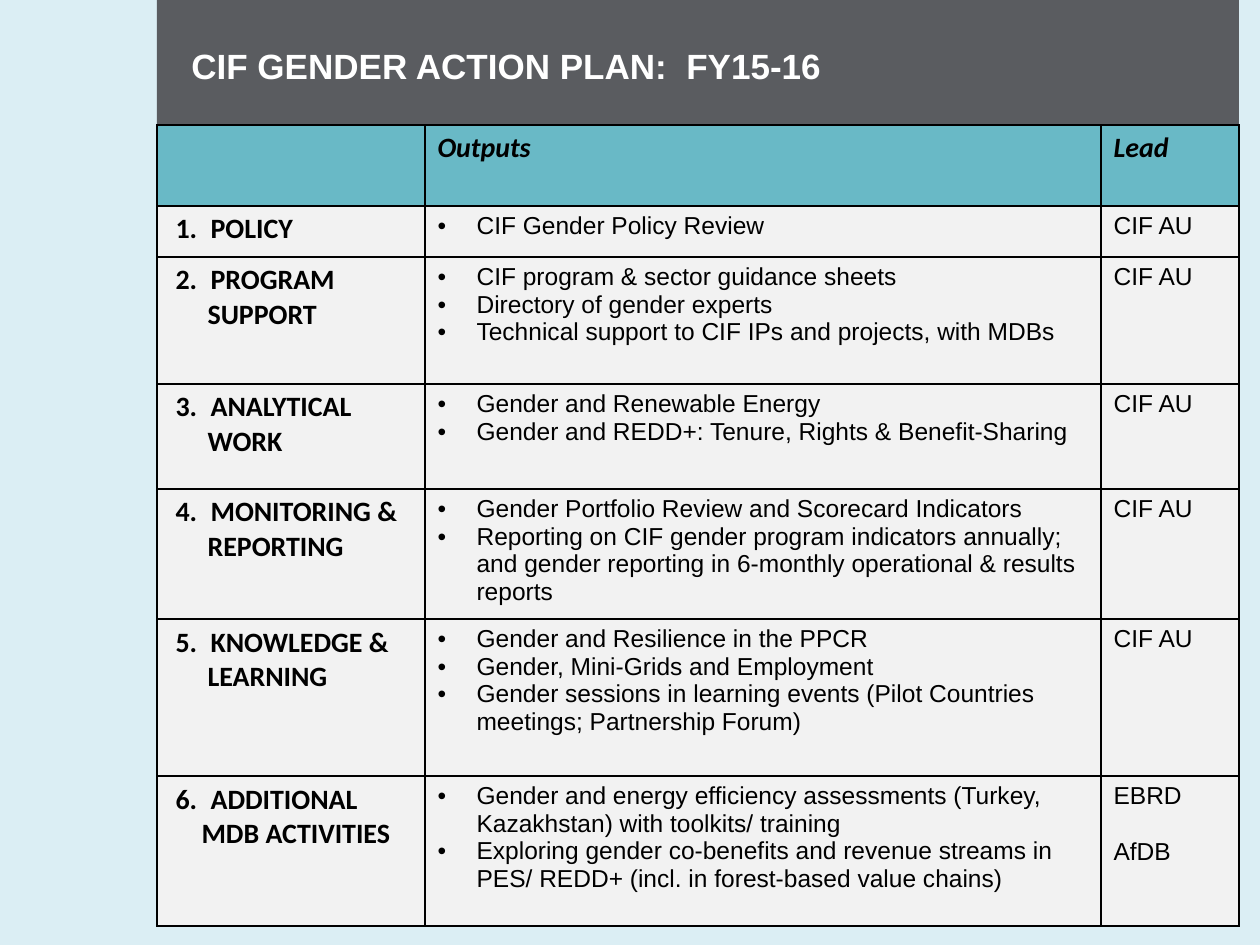
from dataclasses import dataclass
from typing import Any, NamedTuple

from lxml import etree
from pptx import Presentation
from pptx.dml.color import RGBColor
from pptx.enum.shapes import MSO_SHAPE
from pptx.enum.text import MSO_ANCHOR
from pptx.oxml.ns import qn
from pptx.util import Emu, Pt

RECT = MSO_SHAPE.RECTANGLE
MIDDLE = MSO_ANCHOR.MIDDLE
PX = 914400 / 126


@dataclass(frozen=True)
class Theme:
    page: str = "DBEEF4"
    banner: str = "5A5C60"
    header: str = "69B9C6"
    body: str = "F2F2F2"
    ink: str = "000000"
    light: str = "FFFFFF"
    title_size: int = 20
    label_size: int = 16
    body_size: int = 14
    border: int = 1


class Para(NamedTuple):
    text: str
    left: int = 0
    indent: int = 0
    bullet: bool = False
    before: int = 0


class Row(NamedTuple):
    height: int
    label: str
    second: str
    outputs: tuple[str, ...]
    leads: tuple[str, ...] = ("CIF AU",)
    second_left: int = 38


T = Theme()
TITLE = {"name": "Arial", "size": Pt(T.title_size), "bold": True}
LABEL = {"name": "Calibri", "size": Pt(T.label_size), "bold": True}
HEADER = {**LABEL, "italic": True}
BODY = {"name": "Arial", "size": Pt(T.body_size), "bold": False}

COLUMNS = (268, 676, 138)
HEADER_HEIGHT = 81
HEADINGS = ("", "Outputs", "Lead")
ROWS = (
    Row(51, "1.\tPOLICY", "", ("CIF Gender Policy Review",)),
    Row(127, "2.\tPROGRAM", "SUPPORT", (
        "CIF program & sector guidance sheets",
        "Directory of gender experts",
        "Technical support to CIF IPs and projects, with MDBs")),
    Row(105, "3.\tANALYTICAL", "WORK", (
        "Gender and Renewable Energy",
        "Gender and REDD+: Tenure, Rights & Benefit-Sharing")),
    Row(126, "4.\tMONITORING &", "REPORTING", (
        "Gender Portfolio Review and Scorecard Indicators",
        "Reporting on CIF gender program indicators annually; and gender "
        "reporting in 6-monthly operational & results reports")),
    Row(157, "5.\tKNOWLEDGE &", "LEARNING", (
        "Gender and Resilience in the PPCR",
        "Gender, Mini-Grids and Employment",
        "Gender sessions in learning events (Pilot Countries meetings; "
        "Partnership Forum)")),
    Row(150, "6.\tADDITIONAL", "MDB ACTIVITIES", (
        "Gender and energy efficiency assessments (Turkey, Kazakhstan) "
        "with toolkits/ training",
        "Exploring gender co-benefits and revenue streams in PES/ REDD+ "
        "(incl. in forest-based value chains)"),
        ("EBRD", "AfDB"), 32),
)


def px(n: int) -> Emu:
    return Emu(round(n * PX))


def rgb(color: str) -> RGBColor:
    return RGBColor.from_string(color)


def write(tf: Any, paras: list[Para], fmt: dict[str, Any], color: str = T.ink) -> None:
    for i, para in enumerate(paras):
        p = tf.add_paragraph() if i else tf.paragraphs[0]
        if para.before:
            p.space_before = Pt(para.before)
        pPr = p._p.get_or_add_pPr()
        pPr.set("marL", str(px(para.left)))
        pPr.set("indent", str(px(para.indent)))
        if para.bullet:
            etree.SubElement(pPr, qn("a:buFont"), typeface="Arial")
            etree.SubElement(pPr, qn("a:buChar"), char="•")
        r = p.add_run()
        r.text = para.text
        for name, value in fmt.items():
            setattr(r.font, name, value)
        r.font.color.rgb = rgb(color)


def style_cell(cell: Any, fill: str) -> None:
    cell.fill.solid()
    cell.fill.fore_color.rgb = rgb(fill)
    tcPr = cell._tc.get_or_add_tcPr()
    for i, side in enumerate(("lnL", "lnR", "lnT", "lnB")):
        ln = etree.Element(qn(f"a:{side}"), w=str(Pt(T.border)))
        solid = etree.SubElement(ln, qn("a:solidFill"))
        etree.SubElement(solid, qn("a:srgbClr"), val=T.ink)
        tcPr.insert(i, ln)


def add_banner(slide: Any) -> None:
    sp = slide.shapes.add_shape(RECT, px(157), px(0), px(1082), px(147))
    sp.shadow.inherit = False
    sp.fill.solid()
    sp.fill.fore_color.rgb = rgb(T.banner)
    sp.line.fill.background()
    tf = slide.shapes.add_textbox(px(179), px(22), px(1018), px(88)).text_frame
    tf.word_wrap = True
    tf.vertical_anchor = MIDDLE
    write(tf, [Para("CIF GENDER ACTION PLAN:  FY15-16")], TITLE, T.light)


def add_plan(slide: Any) -> None:
    heights = [HEADER_HEIGHT] + [row.height for row in ROWS]
    table = slide.shapes.add_table(
        len(heights), len(COLUMNS), px(157), px(125),
        px(sum(COLUMNS)), px(sum(heights))).table
    table.first_row = table.horz_banding = False
    for column, width in zip(table.columns, COLUMNS):
        column.width = px(width)
    for line, height in zip(table.rows, heights):
        line.height = px(height)
    for i, heading in enumerate(HEADINGS):
        cell = table.cell(0, i)
        style_cell(cell, T.header)
        if heading:
            write(cell.text_frame, [Para(heading)], HEADER)
    for n, row in enumerate(ROWS, 1):
        label = [Para(row.label, 41, -35)]
        if row.second:
            label.append(Para(row.second, row.second_left))
        outputs = [Para(text, 39, -39, True) for text in row.outputs]
        leads = [Para(text, before=16 if i else 0)
                 for i, text in enumerate(row.leads)]
        for i, (paras, fmt) in enumerate(
                ((label, LABEL), (outputs, BODY), (leads, BODY))):
            cell = table.cell(n, i)
            style_cell(cell, T.body)
            write(cell.text_frame, paras, fmt)


def main() -> None:
    prs = Presentation()
    prs.slide_width, prs.slide_height = px(1260), px(945)
    slide = prs.slides.add_slide(prs.slide_layouts[6])
    slide.background.fill.solid()
    slide.background.fill.fore_color.rgb = rgb(T.page)
    add_banner(slide)
    add_plan(slide)
    prs.save("out.pptx")


if __name__ == "__main__":
    main()
